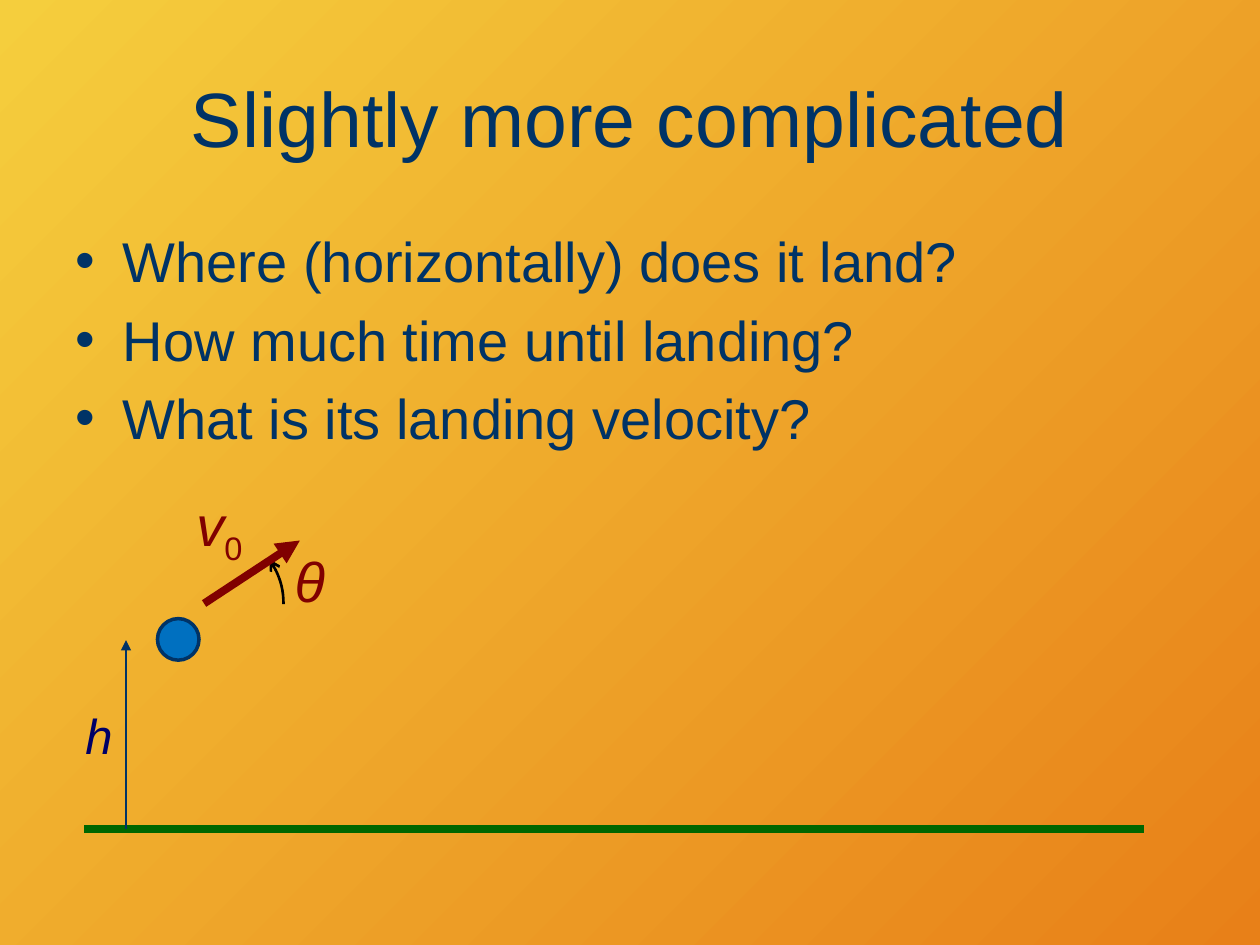
from lxml.etree import SubElement
from pptx import Presentation
from pptx.dml.color import RGBColor
from pptx.enum.shapes import MSO_CONNECTOR as Connector, MSO_SHAPE as Shape
from pptx.enum.text import MSO_AUTO_SIZE as AutoSize, PP_ALIGN as Align
from pptx.oxml.ns import qn
from pptx.util import Inches, Pt

NAVY = RGBColor(0x00, 0x33, 0x66)
INDIGO = RGBColor(0x00, 0x00, 0x66)
MAROON = RGBColor(0x80, 0x00, 0x00)
GREEN = RGBColor(0x00, 0x66, 0x00)
BLUE = RGBColor(0x00, 0x70, 0xC0)
BLACK = RGBColor(0x00, 0x00, 0x00)
YELLOW = RGBColor(0xF5, 0xCE, 0x3D)
ORANGE = RGBColor(0xE8, 0x80, 0x18)


def write(para, text, size=32, color=NAVY, italic=False, baseline=None):
    """Append a formatted run of text to a paragraph."""
    span = para.add_run()
    span.text = text
    font = span.font
    font.name, font.size, font.italic = "Arial", Pt(size), italic
    font.color.rgb = color
    if baseline is not None:
        span._r.get_or_add_rPr().set("baseline", str(baseline * 1000))


class SlideBuilder:
    """Hold the current slide and draw its elements in one style."""

    def __init__(self, page):
        self.page = page
        self.shapes = page.shapes

    def gradient(self, start, end):
        fill = self.page.background.fill
        fill.gradient()
        fill.gradient_angle = 315
        for stop, color in zip(fill.gradient_stops, (start, end)):
            stop.color.rgb = color

    def start_group(self):
        self.shapes = self.page.shapes.add_group_shape().shapes

    def end_group(self):
        self.shapes = self.page.shapes

    def placeholder(self, index, at, lines, size, align):
        box = self.page.placeholders[index]
        box.left, box.top, box.width, box.height = map(Inches, at)
        frame = box.text_frame
        frame.auto_size = AutoSize.NONE
        for number, line in enumerate(lines):
            para = frame.add_paragraph() if number else frame.paragraphs[0]
            para.alignment = align
            write(para, line, size=size)

    def stroke(self, shape, color, width, head=None, tail=None):
        shape.line.color.rgb = color
        shape.line.width = Pt(width)
        for tag, kind in (("a:headEnd", head), ("a:tailEnd", tail)):
            if kind:
                SubElement(shape.line._get_or_add_ln(), qn(tag), type=kind)

    def line(self, start, end, color, width, tail=None):
        line = self.shapes.add_connector(
            Connector.STRAIGHT, *map(Inches, start + end))
        self.stroke(line, color, width, tail=tail)
        SubElement(line._element.spPr, qn("a:effectLst"))

    def shape(self, kind, at, color, width, fill=None, angles=(), head=None):
        shape = self.shapes.add_shape(kind, *map(Inches, at))
        shape.shadow.inherit = False
        if fill is None:
            shape.fill.background()
        else:
            shape.fill.solid()
            shape.fill.fore_color.rgb = fill
        for index, angle in enumerate(angles):
            shape.adjustments[index] = angle
        self.stroke(shape, color, width, head=head)

    def label(self, at, text, color, size=32, subscript=None):
        frame = self.shapes.add_textbox(*map(Inches, at)).text_frame
        frame.word_wrap = False
        frame.auto_size = AutoSize.SHAPE_TO_FIT_TEXT
        para = frame.paragraphs[0]
        write(para, text, size=size, color=color, italic=True)
        if subscript:
            write(para, subscript, size=size, color=color, baseline=-25)


def main():
    deck = Presentation()
    deck.slide_width, deck.slide_height = Inches(10), Inches(7.5)
    slide = SlideBuilder(deck.slides.add_slide(deck.slide_layouts[1]))
    slide.gradient(YELLOW, ORANGE)
    slide.placeholder(0, (0.5, 0.3, 9, 1.25), ["Slightly more complicated"],
                      44, Align.CENTER)
    questions = ["Where (horizontally) does it land?",
                 "How much time until landing?",
                 "What is its landing velocity?"]
    slide.placeholder(1, (0.5, 1.75, 9, 2.5), questions, 32, Align.LEFT)

    ground = 6.58
    slide.start_group()
    slide.line((0.67, ground), (9.08, ground), GREEN, 4.5)
    slide.shape(Shape.OVAL, (1.25, 4.91, 0.33, 0.33), NAVY, 2, fill=BLUE)
    slide.shape(Shape.ARC, (1, 4.17, 1.25, 1.25), BLACK, 1.5,
                angles=(195.31, 0), head="arrow")
    slide.line((1.62, 4.79), (2.38, 4.29), MAROON, 4.5, tail="triangle")
    slide.label((1.46, 3.84, 0.59, 0.64), "v", MAROON, subscript="0")
    slide.label((2.24, 4.29, 0.44, 0.64), "θ", MAROON)
    slide.end_group()

    slide.line((1, ground), (1, 5.08), NAVY, 1.5, tail="triangle")
    slide.label((0.58, 5.55, 0.42, 0.57), "h", INDIGO, size=28)
    deck.save("out.pptx")


if __name__ == "__main__":
    main()
